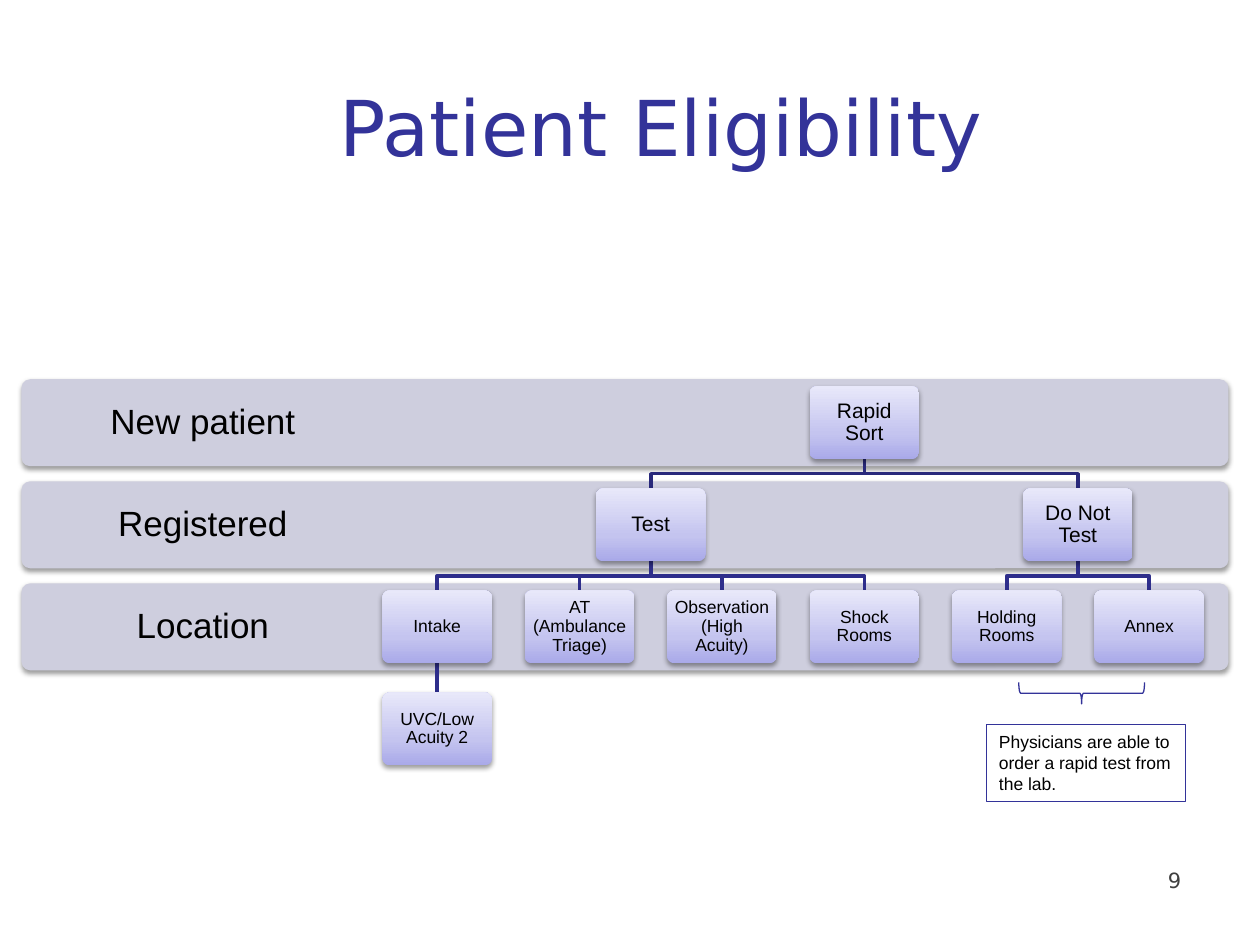
from copy import deepcopy

from lxml.etree import SubElement
from pptx import Presentation
from pptx.dml.color import RGBColor
from pptx.enum.shapes import MSO_CONNECTOR, MSO_SHAPE
from pptx.enum.text import MSO_ANCHOR, MSO_AUTO_SIZE, PP_ALIGN
from pptx.oxml.ns import qn
from pptx.util import Inches, Pt

COLORS = {
    "title": "333399", "text": "000000", "number": "404040",
    "band": "CECEDE", "paper": "FFFFFF", "shadow": "000000",
    "node_bottom": "A9A9E9", "node_middle": "C4C4EF", "node_top": "E8E8FA",
    "upper_link": "29297B", "lower_link": "2E2E8B",
}
BANDS = ["New patient", "Registered", "Location"]
NODES = {
    "Rapid Sort": (3, 0, None),
    "Test": (1.5, 1, "Rapid Sort"),
    "Do Not Test": (4.5, 1, "Rapid Sort"),
    "Intake": (0, 2, "Test"),
    "AT (Ambulance Triage)": (1, 2, "Test"),
    "Observation (High Acuity)": (2, 2, "Test"),
    "Shock Rooms": (3, 2, "Test"),
    "Holding Rooms": (4, 2, "Do Not Test"),
    "Annex": (5, 2, "Do Not Test"),
    "UVC/Low Acuity 2": (0, 3, "Intake"),
}


def rgb(name):
    return RGBColor.from_string(COLORS[name])


def write(frame, text, size=10, font="Arial", color="text", align=PP_ALIGN.LEFT,
          anchor=MSO_ANCHOR.TOP, spacing=None, inset=None, fit=MSO_AUTO_SIZE.NONE):
    frame.word_wrap = True
    frame.auto_size = fit
    frame.vertical_anchor = anchor
    if inset is not None:
        frame.margin_left = frame.margin_right = Inches(inset)
        frame.margin_top = frame.margin_bottom = Inches(inset)
    paragraph = frame.paragraphs[0]
    paragraph.alignment = align
    paragraph.line_spacing = spacing
    run = paragraph.add_run()
    run.text = text
    run.font.size = Pt(size)
    run.font.name = font
    run.font.color.rgb = rgb(color)


class EligibilityChart:
    """Style and drawing methods for a banded decision tree on one slide."""

    FIRST_CENTER, COLUMN_PITCH = 3.47, 1.13
    FIRST_ROW, ROW_PITCH = 3.01, 0.81
    BAND_LEFT, BAND_WIDTH, BAND_HEIGHT = 0.17, 9.58, 0.69
    LABEL_WIDTH = 2.88
    NODE_WIDTH, NODE_HEIGHT = 0.87, 0.58
    CENTERED = {"align": PP_ALIGN.CENTER, "anchor": MSO_ANCHOR.MIDDLE, "spacing": 0.9}

    def __init__(self, presentation):
        self.width, self.height = presentation.slide_width, presentation.slide_height
        self.slide = presentation.slides.add_slide(presentation.slide_layouts[5])
        self.shapes = self.slide.shapes

    def share(self, left, top, width, height):
        return [int(whole * percent / 100) for whole, percent in
                zip((self.width, self.height) * 2, (left, top, width, height))]

    def center(self, column):
        return self.FIRST_CENTER + column * self.COLUMN_PITCH

    def band_top(self, row):
        return self.FIRST_ROW + row * self.ROW_PITCH

    def node_top(self, row):
        return self.band_top(row) + (self.BAND_HEIGHT - self.NODE_HEIGHT) / 2

    def panel(self, left, top, width, height):
        panel = self.shapes.add_shape(MSO_SHAPE.ROUNDED_RECTANGLE,
                                      *map(Inches, (left, top, width, height)))
        panel.adjustments[0] = 0.1
        panel.line.fill.background()
        panel.shadow.inherit = False
        effects = panel._element.spPr.find(qn("a:effectLst"))
        shadow = SubElement(effects, qn("a:outerShdw"), blurRad=str(Pt(3.1)),
                            dist=str(Pt(1.6)), dir="5400000", rotWithShape="0")
        tint = SubElement(shadow, qn("a:srgbClr"), val=COLORS["shadow"])
        SubElement(tint, qn("a:alpha"), val="38000")
        return panel

    def band(self, row, label):
        top = self.band_top(row)
        panel = self.panel(self.BAND_LEFT, top, self.BAND_WIDTH, self.BAND_HEIGHT)
        panel.fill.solid()
        panel.fill.fore_color.rgb = rgb("band")
        heading = self.shapes.add_textbox(*map(Inches, (
            self.BAND_LEFT, top, self.LABEL_WIDTH, self.BAND_HEIGHT)))
        write(heading.text_frame, label, size=20, inset=0.16, **self.CENTERED)

    def node(self, column, row, label):
        panel = self.panel(self.center(column) - self.NODE_WIDTH / 2, self.node_top(row),
                           self.NODE_WIDTH, self.NODE_HEIGHT)
        panel.fill.gradient()
        panel.fill.gradient_angle = 90
        stops = panel._element.spPr.find(qn("a:gradFill")).find(qn("a:gsLst"))
        stops.insert(1, deepcopy(stops[0]))
        blend = zip((0, 0.35, 1), ("node_bottom", "node_middle", "node_top"))
        for stop, (position, color) in zip(panel.fill.gradient_stops, blend):
            stop.position = position
            stop.color.rgb = rgb(color)
        size, inset = (12, 0.05) if row < 2 else (10, 0.04)
        write(panel.text_frame, label, size=size, inset=inset, **self.CENTERED)

    def link(self, parent, child):
        (start_column, start_row), (end_column, end_row) = parent, child
        start_x, end_x = Inches(self.center(start_column)), Inches(self.center(end_column))
        start_y = Inches(self.node_top(start_row) + self.NODE_HEIGHT)
        end_y = Inches(self.node_top(end_row))
        if start_x == end_x:
            branch = self.shapes.add_connector(MSO_CONNECTOR.STRAIGHT,
                                               start_x, start_y, end_x, end_y)
            SubElement(branch._element.spPr, qn("a:effectLst"))
        else:
            middle = (start_y + end_y) // 2
            outline = self.shapes.build_freeform(start_x, start_y)
            outline.add_line_segments([(start_x, middle), (end_x, middle), (end_x, end_y)],
                                      close=False)
            branch = outline.convert_to_shape()
            branch.fill.background()
            branch.shadow.inherit = False
        branch.line.color.rgb = rgb("lower_link" if start_row else "upper_link")
        branch.line.width = Pt(2)

    def title(self, text, *area):
        heading = self.shapes.title
        heading.left, heading.top, heading.width, heading.height = self.share(*area)
        write(heading.text_frame, text, size=44, font="DejaVu Sans", color="title",
              align=PP_ALIGN.CENTER)

    def page_number(self, text, *area):
        number = self.shapes.add_textbox(*self.share(*area))
        write(number.text_frame, text, size=12, font="DejaVu Sans", color="number")

    def outlined(self, preset, *area):
        figure = self.shapes.add_shape(preset, *self.share(*area))
        figure.shadow.inherit = False
        figure.fill.solid()
        figure.fill.fore_color.rgb = rgb("paper")
        figure.line.color.rgb = rgb("title")
        figure.line.width = Pt(0.75)
        return figure

    def brace(self, *area):
        brace = self.outlined(MSO_SHAPE.LEFT_BRACE, *area)
        brace.rotation = 270
        brace.adjustments[0] = 0.083

    def note(self, text, *area):
        note = self.outlined(MSO_SHAPE.RECTANGLE, *area)
        note.fill.background()
        write(note.text_frame, text, fit=MSO_AUTO_SIZE.SHAPE_TO_FIT_TEXT)


def main():
    presentation = Presentation()
    presentation.slide_width, presentation.slide_height = Inches(10), Inches(7.5)
    chart = EligibilityChart(presentation)
    chart.title("Patient Eligibility", 12.5, 7.7, 80, 16.7)
    for row, label in enumerate(BANDS):
        chart.band(row, label)
    for column, row, parent in NODES.values():
        if parent:
            chart.link(NODES[parent][:2], (column, row))
    for label, (column, row, _) in NODES.items():
        chart.node(column, row, label)
    chart.page_number("9", 91.7, 91.1, 5.8, 6.7)
    chart.brace(85, 66.7, 1.7, 13.3)
    chart.note("Physicians are able to order a rapid test from the lab.",
               78.3, 76.7, 15.8, 8.1)
    presentation.save("out.pptx")


if __name__ == "__main__":
    main()
